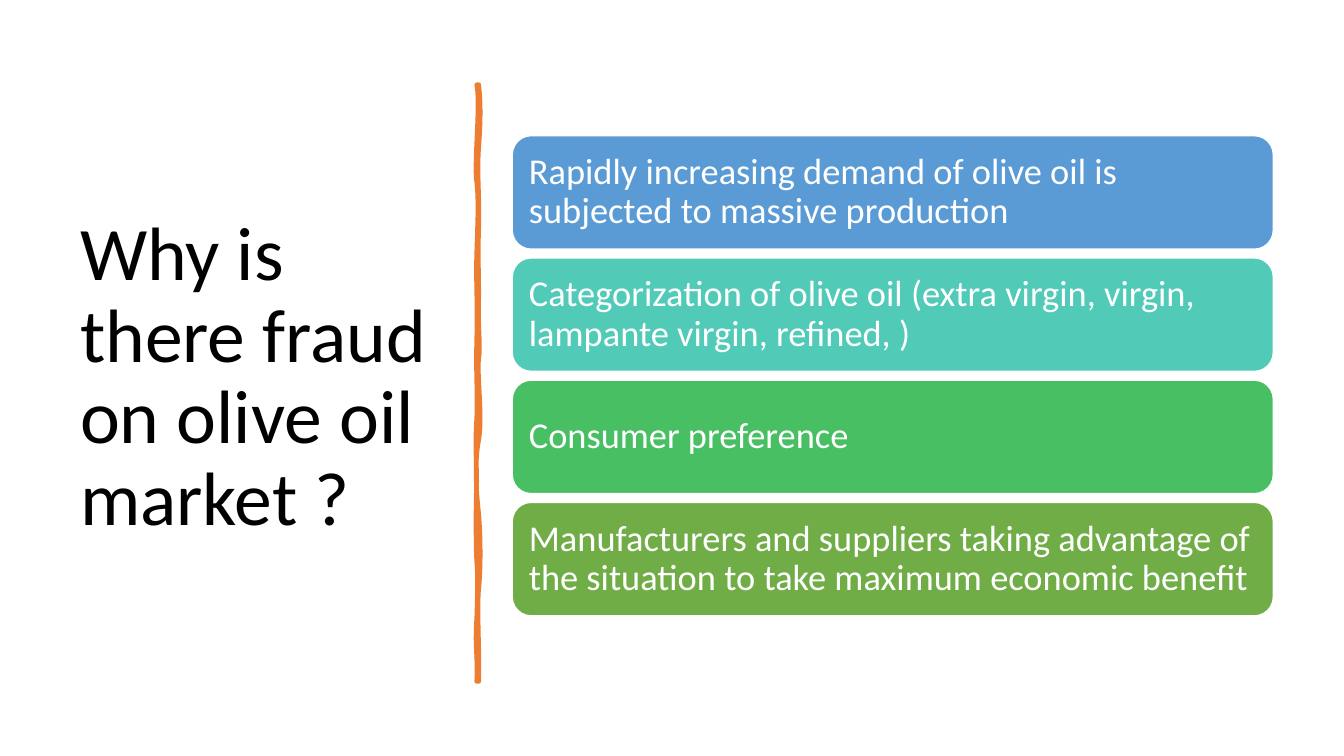
from pptx import Presentation
from pptx.dml.color import RGBColor
from pptx.enum.shapes import MSO_SHAPE as Shape
from pptx.enum.text import MSO_ANCHOR as Anchor, PP_ALIGN as Align
from pptx.util import Cm, Pt
from lxml.etree import SubElement
from pptx.oxml.ns import qn

FONT = "Calibri"
COLOURS = {"text": "000000", "white": "FFFFFF", "divider": "ED7D31",
           "blue": "5B9BD5", "teal": "52CAB8", "green": "49BF64", "olive": "70AD47"}

QUESTION = "Why is there fraud on olive oil market ?"
REASONS = [
    ("Rapidly increasing demand of olive oil is subjected to massive production", "blue"),
    ("Categorization of olive oil (extra virgin, virgin, lampante virgin, refined, )", "teal"),
    ("Consumer preference", "green"),
    ("Manufacturers and suppliers taking advantage of the situation "
     "to take maximum economic benefit", "olive"),
]

# Hand-drawn divider in inches: a start, then two handles and an end for each curve
DIVIDER_START = (4.75, 0.84)
DIVIDER_CURVES = [
    ((4.77, 1.02), (4.77, 1.19), (4.75, 1.46)),
    ((4.73, 1.73), (4.76, 1.95), (4.75, 2.26)),
    ((4.74, 2.57), (4.75, 2.62), (4.75, 2.94)),
    ((4.74, 3.25), (4.77, 3.42), (4.75, 3.56)),
    ((4.73, 3.70), (4.79, 4.14), (4.75, 4.36)),
    ((4.71, 4.57), (4.72, 4.84), (4.75, 5.10)),
    ((4.77, 5.36), (4.77, 5.64), (4.75, 5.84)),
    ((4.73, 6.03), (4.76, 6.50), (4.75, 6.76)),
    ((4.74, 6.76), (4.73, 6.76), (4.73, 6.76)),
    ((4.74, 6.46), (4.71, 6.44), (4.73, 6.13)),
    ((4.74, 5.83), (4.74, 5.70), (4.73, 5.57)),
    ((4.72, 5.44), (4.72, 4.95), (4.73, 4.77)),
    ((4.73, 4.59), (4.71, 4.45), (4.73, 4.15)),
    ((4.74, 3.86), (4.72, 3.73), (4.73, 3.35)),
    ((4.74, 2.98), (4.72, 2.81), (4.73, 2.50)),
    ((4.74, 2.18), (4.75, 2.00), (4.73, 1.81)),
    ((4.70, 1.63), (4.77, 1.04), (4.73, 0.84)),
    ((4.74, 0.84), (4.74, 0.84), (4.75, 0.84)),
]

CARD_LEFT, CARD_TOP, CARD_WIDTH, CARD_HEIGHT = 12.91, 3.42, 19.18, 2.86
CARD_PITCH = 3.08
CARD_INSET = Cm(0.28)


def colour(name):
    return RGBColor.from_string(COLOURS[name])


def paint(shape, fill, line, width):
    shape.shadow.inherit = False
    shape.fill.solid()
    shape.fill.fore_color.rgb = colour(fill)
    shape.line.color.rgb = colour(line)
    shape.line.width = Pt(width)


def write(frame, text, size, ink):
    frame.word_wrap = True
    frame.vertical_anchor = Anchor.MIDDLE
    paragraph = frame.paragraphs[0]
    paragraph.alignment = Align.LEFT
    paragraph.line_spacing = 0.9
    run = paragraph.add_run()
    run.text = text
    run.font.name = FONT
    run.font.size = Pt(size)
    run.font.color.rgb = colour(ink)


def place(point):
    return tuple(Cm(length * 2.54) for length in point)


def draw_curves(shapes, start, curves):
    """Freeform through the curve ends, its segments then bent by the handles."""
    builder = shapes.build_freeform(*place(start))
    builder.add_line_segments([place(curve[-1]) for curve in curves], close=True)
    shape = builder.convert_to_shape()
    segments = list(shape.element.iter(qn("a:lnTo")))
    for segment, curve in zip(segments, curves):
        segment.tag = qn("a:cubicBezTo")
        for old in list(segment):
            segment.remove(old)
        for x, y in map(place, curve):
            SubElement(segment, qn("a:pt"), x=str(x - shape.left), y=str(y - shape.top))
    return shape


prs = Presentation()
prs.slide_width, prs.slide_height = Cm(33.87), Cm(19.05)
slide = prs.slides.add_slide(prs.slide_layouts[6])

# Question on the left
question = slide.shapes.add_textbox(Cm(1.77), Cm(1.78), Cm(9.5), Cm(15.52))
write(question.text_frame, QUESTION, 54, "text")

# Divider with rounded corners
divider = draw_curves(slide.shapes, DIVIDER_START, DIVIDER_CURVES)
paint(divider, "divider", "divider", 3.25)
SubElement(next(divider.element.iter(qn("a:ln"))), qn("a:round"))

# Reason cards
for row, (reason, fill) in enumerate(REASONS):
    card = slide.shapes.add_shape(Shape.ROUNDED_RECTANGLE, Cm(CARD_LEFT),
                                  Cm(CARD_TOP + row * CARD_PITCH),
                                  Cm(CARD_WIDTH), Cm(CARD_HEIGHT))
    paint(card, fill, "white", 1)
    frame = card.text_frame
    frame.margin_left = frame.margin_right = CARD_INSET
    frame.margin_top = frame.margin_bottom = CARD_INSET
    write(frame, reason, 26, "white")

prs.save("out.pptx")
